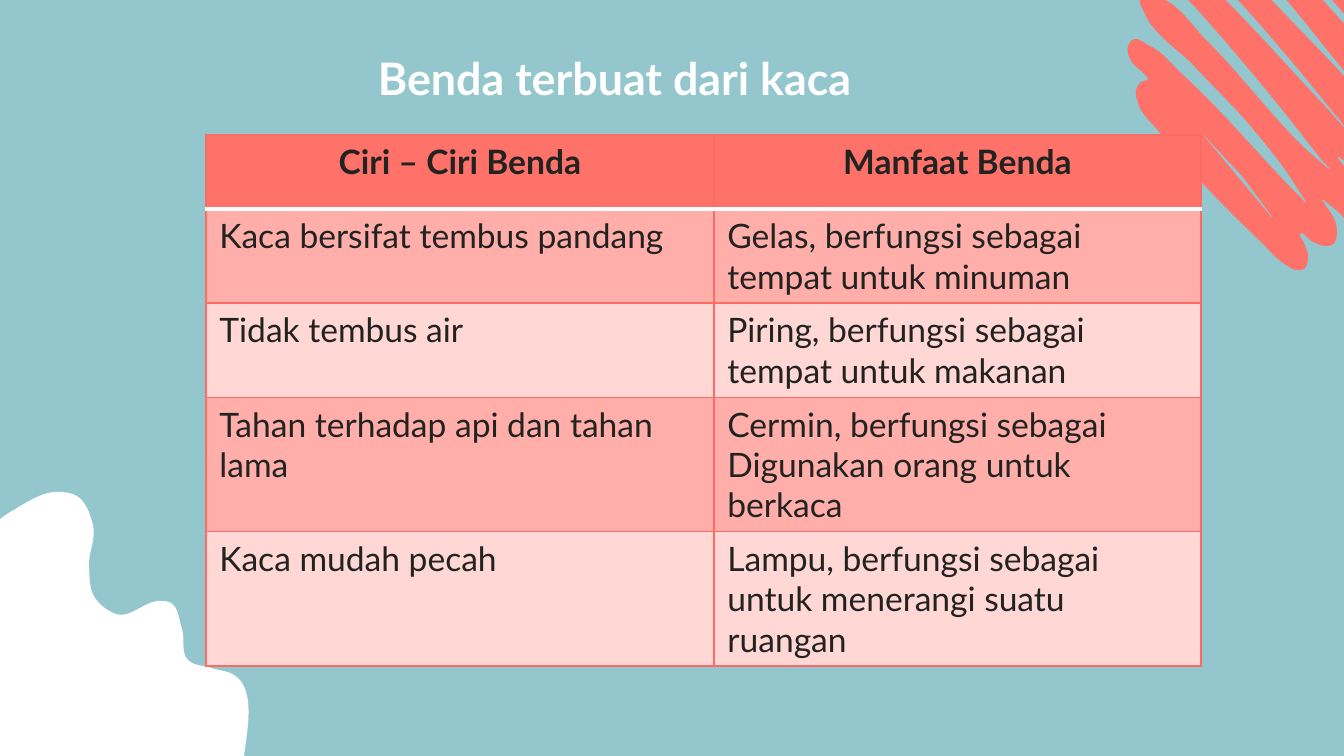
import math

import pptx
import pptx.dml.color
import pptx.enum.text
import pptx.oxml
import pptx.oxml.ns
import pptx.util

PX = 914400 / 134.4
FONT = "Lato"
COLORS = {
    "background": "93C7CD",
    "coral": "FF726A",
    "border": "FD6C64",
    "band_dark": "FFAEAA",
    "band_light": "FFD7D5",
    "ink": "222221",
    "white": "FFFFFF",
}
ROWS = [
    ("Ciri – Ciri Benda", "Manfaat Benda"),
    ("Kaca bersifat tembus pandang", "Gelas, berfungsi sebagai tempat untuk minuman"),
    ("Tidak tembus air", "Piring, berfungsi sebagai tempat untuk makanan"),
    ("Tahan terhadap api dan tahan lama", "Cermin, berfungsi sebagai Digunakan orang untuk berkaca"),
    ("Kaca mudah pecah", "Lampu, berfungsi sebagai untuk menerangi suatu ruangan"),
]
SCRIBBLE = [
    (1304, 269), (1308, 258), (1304, 243), (1300, 234), (1313, 242), (1325, 246),
    (1332, 245), (1337, 230), (1336, 224), (1324, 203), (1322, 200), (1331, 206),
    (1353, 223), (1370, 226), (1374, 223), (1374, 212), (1349, 173), (1339, 157),
    (1343, 160), (1366, 181), (1382, 195), (1398, 196), (1402, 185), (1378, 148),
    (1374, 140), (1406, 169), (1423, 172), (1427, 159), (1403, 122), (1417, 134),
    (1441, 156), (1457, 160), (1461, 149), (1438, 113), (1407, 73), (1356, 8),
    (1277, -85), (1266, -97), (1298, -62), (1364, 12), (1443, 97), (1476, 130),
    (1488, 136), (1490, 128), (1466, 93), (1458, 85), (1407, 26), (1340, -48),
    (1282, -112), (1257, -134), (1243, -141), (1234, -140), (1228, -125), (1246, -98),
    (1305, -31), (1383, 65), (1388, 73), (1372, 55), (1267, -60), (1219, -109),
    (1206, -118), (1193, -120), (1189, -110), (1204, -93), (1279, -9), (1356, 85),
    (1368, 99), (1363, 95), (1332, 63), (1211, -63), (1180, -95), (1165, -99),
    (1161, -93), (1164, -83), (1181, -63), (1263, 28), (1333, 112), (1344, 126),
    (1325, 106), (1202, -23), (1167, -55), (1150, -59), (1146, -54), (1149, -43),
    (1195, 7), (1267, 91), (1321, 159), (1329, 169), (1324, 165), (1208, 42),
    (1163, -1), (1145, -7), (1140, 0), (1144, 12), (1195, 67), (1253, 129),
    (1297, 188), (1305, 202), (1301, 198), (1183, 75), (1150, 46), (1132, 40),
    (1128, 46), (1130, 59), (1145, 75), (1148, 79), (1141, 82), (1136, 90),
    (1138, 103), (1160, 133), (1261, 242), (1286, 265), (1296, 270),
]
SCRIBBLE_GAP = [(1273, 219), (1198, 129), (1242, 176), (1271, 215)]
BLOB = [
    (62, 492), (12, 511), (-65, 613), (-133, 741), (-66, 786), (56, 789),
    (208, 785), (234, 777), (246, 741), (234, 675), (211, 668), (188, 660),
    (182, 629), (169, 602), (161, 601), (116, 614), (95, 598), (89, 567),
    (93, 525), (75, 495),
]


def px(n):
    return round(n * PX)


def rgb(name):
    return pptx.dml.color.RGBColor.from_string(COLORS[name])


def write(tf, text, size=18, color="ink", bold=False, align=None, spacing=None):
    p = tf.paragraphs[0]
    p.alignment = align
    p.line_spacing = spacing
    r = p.add_run()
    r.text = text
    r.font.name = FONT
    r.font.size = pptx.util.Pt(size)
    r.font.bold = bold
    r.font.color.rgb = rgb(color)


def tangent(before, point, after):
    d0, d1 = math.dist(before, point), math.dist(point, after)
    x, y = (
        (point[k] - before[k]) * d1 / d0 + (after[k] - point[k]) * d0 / d1
        for k in (0, 1)
    )
    length = math.hypot(x, y) or 1
    return x / length, y / length


def curve_segments(points):
    n = len(points)
    tangents = [tangent(points[i - 1], points[i], points[(i + 1) % n]) for i in range(n)]
    for i in range(n):
        j = (i + 1) % n
        a, d = points[i], points[j]
        handle = math.dist(a, d) / 3
        b = [a[k] + handle * tangents[i][k] for k in (0, 1)]
        c = [d[k] - handle * tangents[j][k] for k in (0, 1)]
        yield b, c, d


def round_outline(sp, points):
    left = min(x for x, y in points)
    top = min(y for x, y in points)
    lines = list(sp._element.iter(pptx.oxml.ns.qn("a:lnTo")))
    for line, segment in zip(lines, curve_segments(points)):
        pts = "".join(f'<a:pt x="{px(x - left)}" y="{px(y - top)}"/>' for x, y in segment)
        curve = pptx.oxml.parse_xml(
            f'<a:cubicBezTo {pptx.oxml.ns.nsdecls("a")}>{pts}</a:cubicBezTo>'
        )
        line.getparent().replace(line, curve)


def add_outline(s, points, color, gap=()):
    builder = s.shapes.build_freeform(*points[0], scale=PX)
    builder.add_line_segments(points[1:] + points[:1], close=True)
    if gap:
        builder.move_to(*gap[0])
        builder.add_line_segments(gap[1:], close=True)
    sp = builder.convert_to_shape()
    path = next(sp._element.iter(pptx.oxml.ns.qn("a:path")))
    path.set("w", str(sp.width))
    path.set("h", str(sp.height))
    for pt in path.iter(pptx.oxml.ns.qn("a:pt")):
        for axis in "xy":
            pt.set(axis, str(px(int(pt.get(axis)))))
    round_outline(sp, points)
    sp.shadow.inherit = False
    sp.fill.solid()
    sp.fill.fore_color.rgb = rgb(color)
    sp.line.fill.background()


def set_border(cell, side, color, width):
    ns = pptx.oxml.ns.nsdecls("a")
    line = pptx.oxml.parse_xml(
        f'<a:ln{side} {ns} w="{pptx.util.Pt(width)}"><a:solidFill>'
        f'<a:srgbClr val="{COLORS[color]}"/></a:solidFill></a:ln{side}>'
    )
    tcPr = cell._tc.get_or_add_tcPr()
    tcPr.insert("LRTB".index(side), line)


def add_title(s, text):
    sp = s.shapes.title
    sp.left, sp.top, sp.width, sp.height = px(280), px(29), px(680), px(95)
    tf = sp.text_frame
    tf.word_wrap = True
    tf.vertical_anchor = pptx.enum.text.MSO_ANCHOR.TOP
    tf.margin_left = tf.margin_right = tf.margin_top = tf.margin_bottom = pptx.util.Inches(0.1)
    write(tf, text, size=24, color="white", bold=True,
          align=pptx.enum.text.PP_ALIGN.CENTER, spacing=1.15)


def add_benefits_table(s):
    row_height = 74
    table = s.shapes.add_table(
        len(ROWS), 2, px(206), px(135), px(995), px(row_height * len(ROWS))
    ).table
    table.horz_banding = False
    for column, width in zip(table.columns, (508, 487)):
        column.width = px(width)
    for i, texts in enumerate(ROWS):
        table.rows[i].height = px(row_height)
        header = i == 0
        fill = "coral" if header else "band_dark" if i % 2 else "band_light"
        for j, text in enumerate(texts):
            cell = table.cell(i, j)
            for side in "LRTB":
                rule = (header and side == "B") or (i == 1 and side == "T")
                set_border(cell, side, *(("white", 2) if rule else ("border", 0.75)))
            cell.fill.solid()
            cell.fill.fore_color.rgb = rgb(fill)
            write(cell.text_frame, text, bold=header,
                  align=pptx.enum.text.PP_ALIGN.CENTER if header else None)


def main():
    prs = pptx.Presentation()
    prs.slide_width, prs.slide_height = px(1344), px(756)
    s = prs.slides.add_slide(prs.slide_layouts[5])
    s.background.fill.solid()
    s.background.fill.fore_color.rgb = rgb("background")
    add_outline(s, SCRIBBLE, "coral", gap=SCRIBBLE_GAP)
    add_outline(s, BLOB, "white")
    add_title(s, "Benda terbuat dari kaca ")
    add_benefits_table(s)
    prs.save("out.pptx")


if __name__ == "__main__":
    main()
